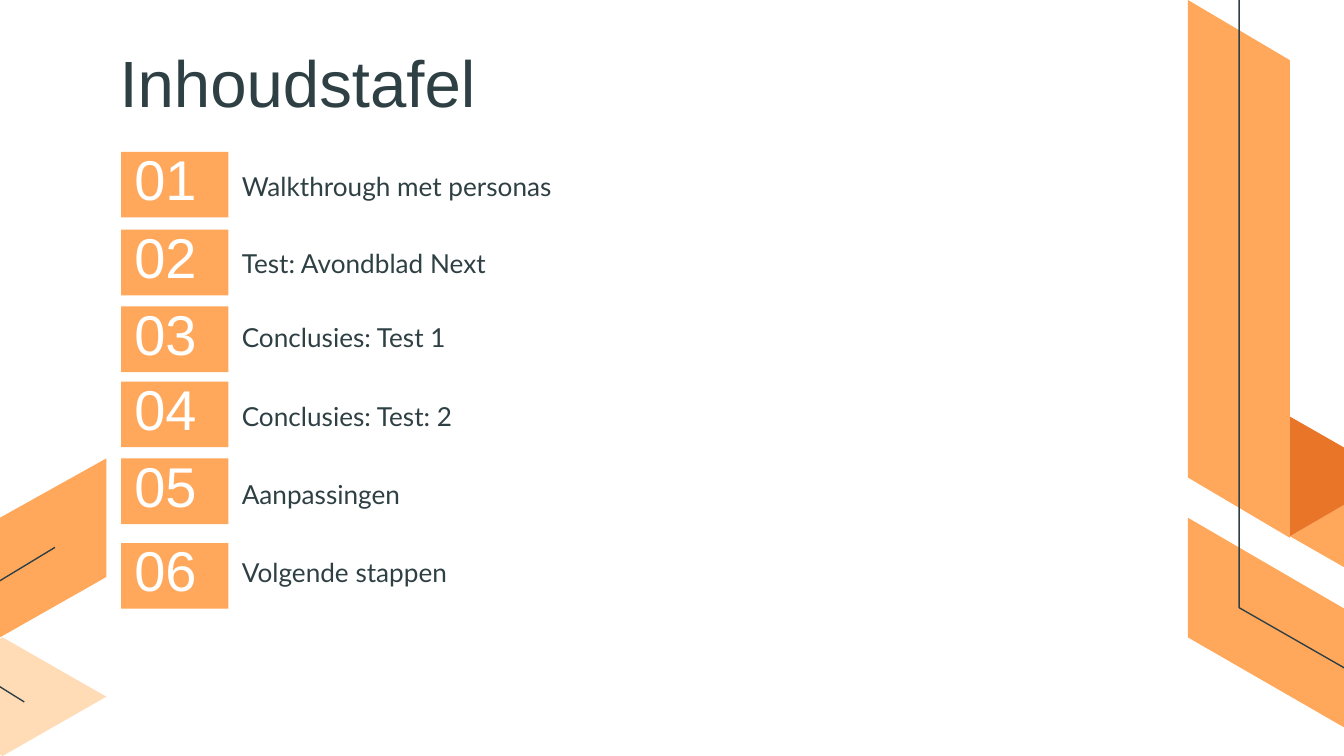
from pptx import Presentation
from pptx.dml.color import RGBColor
from pptx.enum.shapes import MSO_SHAPE
from pptx.enum.text import MSO_ANCHOR, PP_ALIGN
from pptx.util import Cm, Pt

INK, ORANGE, RUST, PEACH, WHITE = "2F4044", "FFA85C", "E97529", "FFDCB6", "FFFFFF"

TITLE_STYLE = {"name": "Arial", "size": Pt(35)}
NUMBER_STYLE = {"name": "Arial", "size": Pt(30)}
LABEL_STYLE = {"name": "Lato", "size": Pt(14)}

LEFT_RIBBONS = [
    (ORANGE, [(0, 9.78), (2.01, 8.66), (2.01, 10.9), (0, 12.04)]),
    (PEACH, [(0.05, 14.28), (-1.91, 13.16), (0.05, 12.04), (2.01, 13.16)]),
]
LEFT_THREAD = [(0.46, 13.26), (-0.76, 12.5), (-0.76, 11.43), (1.04, 10.34)]
RIGHT_RIBBONS = [
    (ORANGE, [(26.34, 11.25), (28.3, 10.13), (26.34, 8.99), (24.38, 10.13)]),
    (RUST, [(26.34, 8.99), (24.38, 10.13), (24.38, 7.87)]),
    (ORANGE, [(22.45, 0), (22.45, 9.02), (24.38, 10.16), (24.38, 1.14)]),
    (ORANGE, [(22.45, 12.04), (22.45, 9.78), (26.34, 12.04), (26.34, 14.28)]),
]
RIGHT_THREAD = [(23.42, 0), (23.42, 11.48), (27.51, 13.82)]

CHAPTERS = [
    ("Walkthrough met personas", 2.87, 2.97),
    ("Test: Avondblad Next", 4.34, 4.42),
    ("Conclusies: Test 1", 5.79, 5.82),
    ("Conclusies: Test: 2", 7.21, 7.32),
    ("Aanpassingen", 8.66, 8.79),
    ("Volgende stappen", 10.26, 10.26),
]


def color(value):
    return RGBColor.from_string(value)


class Painter:
    def __init__(self, page):
        self.page = page

    def outline(self, points, closed):
        corners = [(Cm(x), Cm(y)) for x, y in points]
        builder = self.page.shapes.build_freeform(*corners[0])
        builder.add_line_segments(corners[1:], close=closed)
        shape = builder.convert_to_shape()
        shape.shadow.inherit = False
        return shape

    def ribbon(self, fill, points):
        shape = self.outline(points, True)
        shape.fill.solid()
        shape.fill.fore_color.rgb = color(fill)
        shape.line.fill.background()

    def thread(self, points):
        shape = self.outline(points, False)
        shape.fill.background()
        shape.line.color.rgb = color(INK)
        shape.line.width = Pt(0.75)

    def put_text(self, box, text, style, ink, top_inset=0, anchor=MSO_ANCHOR.TOP):
        frame = box.text_frame
        layout = {
            "word_wrap": True,
            "vertical_anchor": anchor,
            "margin_left": Cm(0.25),
            "margin_right": Cm(0.25),
            "margin_top": Cm(top_inset),
            "margin_bottom": Cm(0.25),
        }
        for name, value in layout.items():
            setattr(frame, name, value)
        para = frame.paragraphs[0]
        para.alignment = PP_ALIGN.LEFT
        span = para.add_run()
        span.text = text
        for name, value in style.items():
            setattr(span.font, name, value)
        span.font.color.rgb = color(ink)

    def title(self, text):
        box = self.page.shapes.add_textbox(Cm(2.01), Cm(0.79), Cm(19.69), Cm(1.45))
        self.put_text(box, text, TITLE_STYLE, INK)

    def number(self, text, top):
        box = self.page.shapes.add_shape(
            MSO_SHAPE.RECTANGLE, Cm(2.29), Cm(top), Cm(2.03), Cm(1.24))
        box.shadow.inherit = False
        box.fill.solid()
        box.fill.fore_color.rgb = color(ORANGE)
        box.line.fill.background()
        self.put_text(box, text, NUMBER_STYLE, WHITE, anchor=MSO_ANCHOR.MIDDLE)

    def label(self, text, top):
        box = self.page.shapes.add_textbox(Cm(4.32), Cm(top), Cm(8.59), Cm(1.07))
        self.put_text(box, text, LABEL_STYLE, INK, top_inset=0.25)


def main():
    deck = Presentation()
    deck.slide_width, deck.slide_height = Cm(25.4), Cm(14.28)
    painter = Painter(deck.slides.add_slide(deck.slide_layouts[6]))
    for ribbons, thread in ((LEFT_RIBBONS, LEFT_THREAD), (RIGHT_RIBBONS, RIGHT_THREAD)):
        for fill, points in ribbons:
            painter.ribbon(fill, points)
        painter.thread(thread)
    painter.title("Inhoudstafel")
    for index, (text, number_top, label_top) in enumerate(CHAPTERS, 1):
        painter.number(f"{index:02}", number_top)
        painter.label(text, label_top)
    deck.save("out.pptx")


if __name__ == "__main__":
    main()
